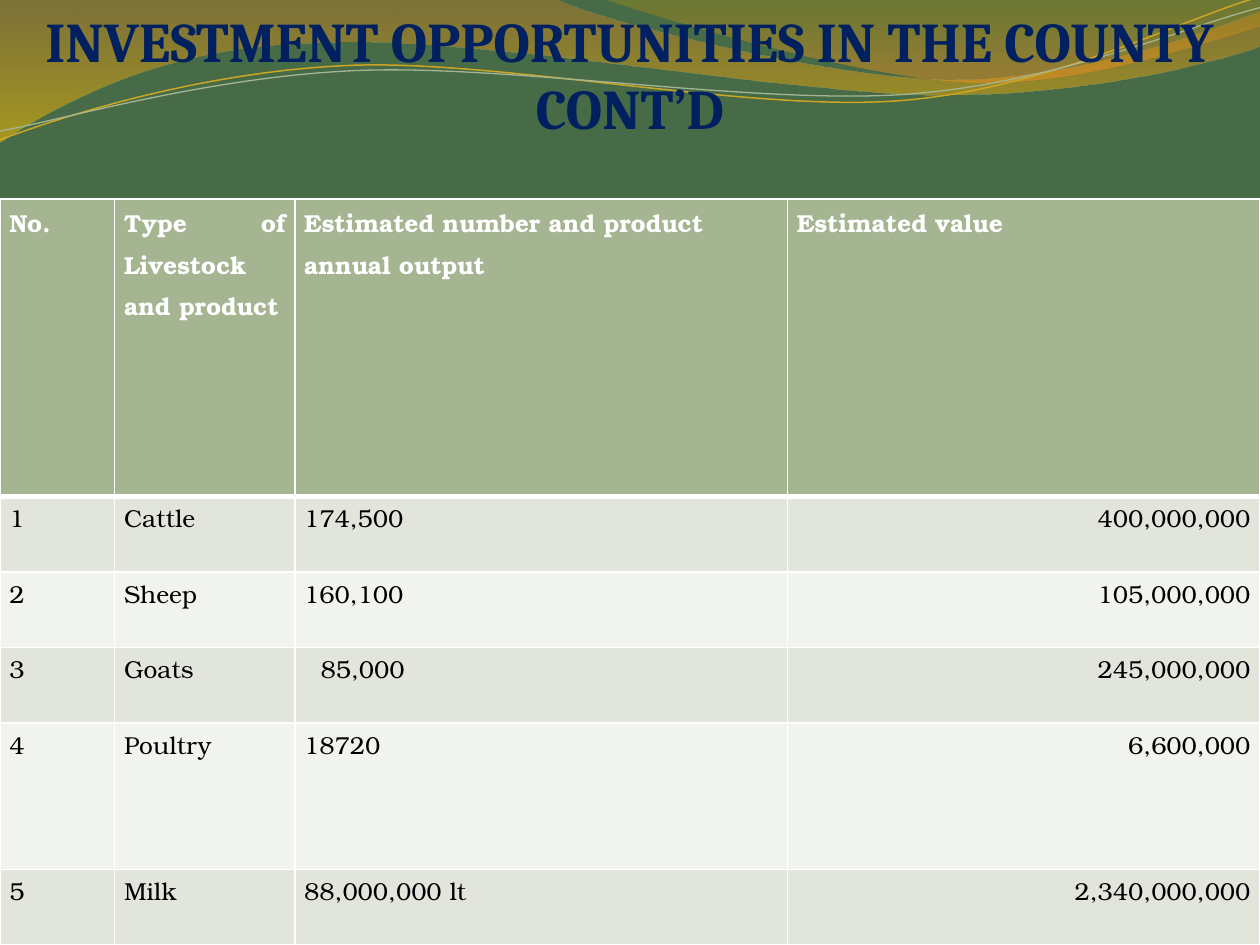
from dataclasses import dataclass
from math import cos, radians, sin

from lxml import etree
from pptx import Presentation
from pptx.dml.color import RGBColor
from pptx.enum.text import PP_ALIGN
from pptx.oxml.ns import qn
from pptx.util import Inches, Pt

LEFT, MID, RIGHT, JUST = PP_ALIGN.LEFT, PP_ALIGN.CENTER, PP_ALIGN.RIGHT, PP_ALIGN.JUSTIFY
TILT = -2.7


@dataclass(frozen=True)
class Theme:
    back: str = "466B46"
    navy: str = "002060"
    white: str = "FFFFFF"
    black: str = "000000"
    sage: str = "A5B592"
    gold: str = "CCA624"
    bands: tuple = ("E1E5DC", "F0F3EE")
    serif: str = "Cambria"
    body: str = "TeX Gyre Bonum"
    big: int = 32
    small: int = 14


THEME = Theme()

FILLS = [
    ((-0.01, -0.01, 10.02, 1.14),
     [(0, -0.01), (4.4, -0.01),
      (4.76, 0.17, 6.64, 0.63, 7.58, 0.63), (8.53, 0.63, 9.58, 0.26, 10, 0.09),
      (10.01, 0.36),
      (9.83, 0.44, 8.7, 0.76, 7.46, 0.75), (6.22, 0.75, 3.82, 0.28, 2.57, 0.34),
      (1.29, 0.35, 0.46, 0.83, -0.01, 1.13), (0, -0.01)],
     [(0, "C07A28", 45), (1, "F7BF00", 55)]),
    ((4.79, -0.01, 5.21, 0.7),
     [(4.79, -0.01),
      (5.09, 0.11, 6.82, 0.62, 7.69, 0.65), (8.56, 0.69, 9.61, 0.32, 10, 0.21),
      (10, 0), (4.79, -0.01)],
     [(0, "C09709", 30), (0.8, "F59320", 45)]),
]
LINES = [
    ((-0.02, 0.22, 10.02, 0.71),
     [(0, 1.11), (0.48, 0.93, 1.58, 0.57, 2.77, 0.52),
      (3.95, 0.47, 5.93, 0.89, 7.13, 0.8), (8.33, 0.71, 9.38, 0.15, 9.98, -0.02)],
     THEME.gold, 0.85),
    ((-0.02, 0.3, 10.03, 0.58),
     [(0, 1.04), (0.47, 0.96, 1.64, 0.61, 2.83, 0.56),
      (4.03, 0.51, 5.97, 0.83, 7.17, 0.75), (8.36, 0.67, 9.41, 0.21, 10, 0.06)],
     THEME.sage, 0.75),
]
COLS = [0.91, 1.43, 3.91, 3.75]
ROWS = [2.36, 0.6, 0.6, 0.6, 1.16, 0.6]
HEAD = ["No.", "Type of Livestock and product",
        "Estimated number and product annual output", "Estimated value"]
STOCK = [
    ["1", "Cattle", "174,500", "400,000,000"],
    ["2", "Sheep", "160,100", "105,000,000"],
    ["3", "Goats", "85,000", "245,000,000"],
    ["4", "Poultry", "18720", "6,600,000"],
    ["5", "Milk", "88,000,000 lt", "2,340,000,000"],
]


def rgb(code):
    return RGBColor.from_string(code)


def add_run(para, text, face, size, color, bold):
    run = para.add_run()
    run.text = text
    font = run.font
    font.name, font.size, font.bold = face, Pt(size), bold
    font.color.rgb = rgb(color)


def localize(x, y, box, tilt):
    left, top, width, height = box
    dx, dy = x - left - width / 2, y - top - height / 2
    turn = radians(-tilt)
    return (Inches(width / 2 + dx * cos(turn) - dy * sin(turn)),
            Inches(height / 2 + dx * sin(turn) + dy * cos(turn)))


def add_curve(slide, area, box, parts, tilt=0, close=False):
    ends = [(Inches(part[-2]), Inches(part[-1])) for part in parts]
    pen = slide.shapes.build_freeform(*ends[0], scale=1.0)
    pen.add_line_segments(ends[1:], close=close)
    shape = pen.convert_to_shape()
    left, top, width, height = map(Inches, box)
    shape.left, shape.top = Inches(area[0]) + left, Inches(area[1]) + top
    shape.width, shape.height = width, height
    shape.rotation = tilt
    shape.shadow.inherit = False
    track = shape.element.spPr.find(".//" + qn("a:path"))
    track.set("w", str(width))
    track.set("h", str(height))
    for node in list(track):
        track.remove(node)
    for spot, part in enumerate(parts):
        tag = "a:cubicBezTo" if len(part) == 6 else "a:lnTo" if spot else "a:moveTo"
        step = etree.SubElement(track, qn(tag))
        for x, y in zip(part[::2], part[1::2]):
            px, py = localize(x, y, box, tilt)
            etree.SubElement(step, qn("a:pt"), x=str(px), y=str(py))
    if close:
        etree.SubElement(track, qn("a:close"))
    return shape


def add_waves(slide, area):
    for box, parts, stops in FILLS:
        shape = add_curve(slide, area, box, parts, close=True)
        shape.line.fill.background()
        shape.fill.gradient()
        shape.fill.gradient_angle = 270
        for stop, (place, color, alpha) in zip(shape.fill.gradient_stops, stops):
            stop.position = place
            stop.color.rgb = rgb(color)
        tints = shape.element.spPr.iter(qn("a:srgbClr"))
        for tint, (place, color, alpha) in zip(tints, stops):
            etree.SubElement(tint, qn("a:alpha"), val=str(alpha * 1000))
    for box, parts, color, width in LINES:
        shape = add_curve(slide, area, box, parts, tilt=TILT)
        shape.fill.background()
        shape.line.color.rgb = rgb(color)
        shape.line.width = Pt(width)


def add_title(slide, box):
    frame = slide.shapes.add_textbox(*map(Inches, box)).text_frame
    frame.word_wrap = True
    para = frame.paragraphs[0]
    para.alignment = MID
    add_run(para, "INVESTMENT OPPORTUNITIES IN THE COUNTY CONT’D",
            THEME.serif, THEME.big, THEME.navy, True)


def set_edges(cell, top, base):
    props = cell._tc.get_or_add_tcPr()
    widths = {"a:lnL": 1, "a:lnR": 1, "a:lnT": top, "a:lnB": base}
    for spot, (tag, width) in enumerate(widths.items()):
        line = etree.Element(qn(tag), w=str(Pt(width)))
        fill = etree.SubElement(line, qn("a:solidFill"))
        etree.SubElement(fill, qn("a:srgbClr"), val=THEME.white)
        props.insert(spot, line)


def fill_cell(cell, text, row, col):
    first = row == 0
    cell.margin_left = cell.margin_right = Pt(5.4)
    cell.margin_top = cell.margin_bottom = 0
    cell.fill.solid()
    cell.fill.fore_color.rgb = rgb(THEME.sage if first else THEME.bands[(row - 1) % 2])
    set_edges(cell, 3 if row == 1 else 1, 3 if first else 1)
    para = cell.text_frame.paragraphs[0]
    para.line_spacing = 1.15
    if first:
        para.alignment = LEFT if col == 2 else JUST
    else:
        para.alignment = RIGHT if col == 3 else LEFT
    if text == "85,000":
        para._p.get_or_add_pPr().set("marL", str(Inches(0.13)))
    add_run(para, text, THEME.body, THEME.small,
            THEME.white if first else THEME.black, first)


def add_stock(slide, box):
    table = slide.shapes.add_table(len(ROWS), len(COLS), *map(Inches, box)).table
    for col, width in zip(table.columns, COLS):
        col.width = Inches(width)
    for row, height in zip(table.rows, ROWS):
        row.height = Inches(height)
    for row, texts in enumerate([HEAD] + STOCK):
        for col, text in enumerate(texts):
            fill_cell(table.cell(row, col), text, row, col)


def main():
    deck = Presentation()
    deck.slide_width, deck.slide_height = Inches(10), Inches(7.5)
    slide = deck.slides.add_slide(deck.slide_layouts[6])
    back = slide.background.fill
    back.solid()
    back.fore_color.rgb = rgb(THEME.back)
    add_waves(slide, (0, 0))
    add_stock(slide, (0, 1.58, 10, 5.92))
    add_title(slide, (0, 0, 10, 1.18))
    deck.save("out.pptx")


if __name__ == "__main__":
    main()
